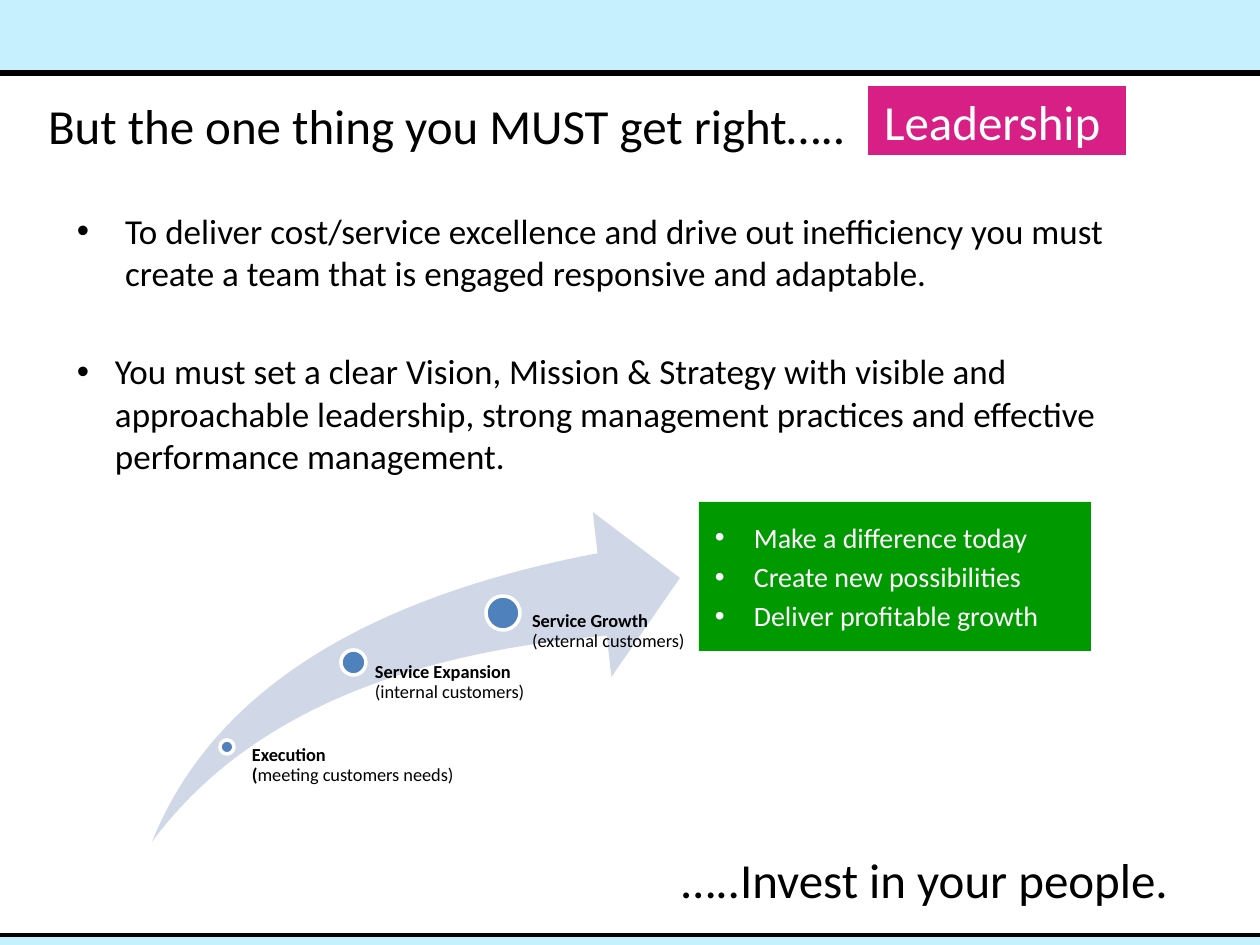
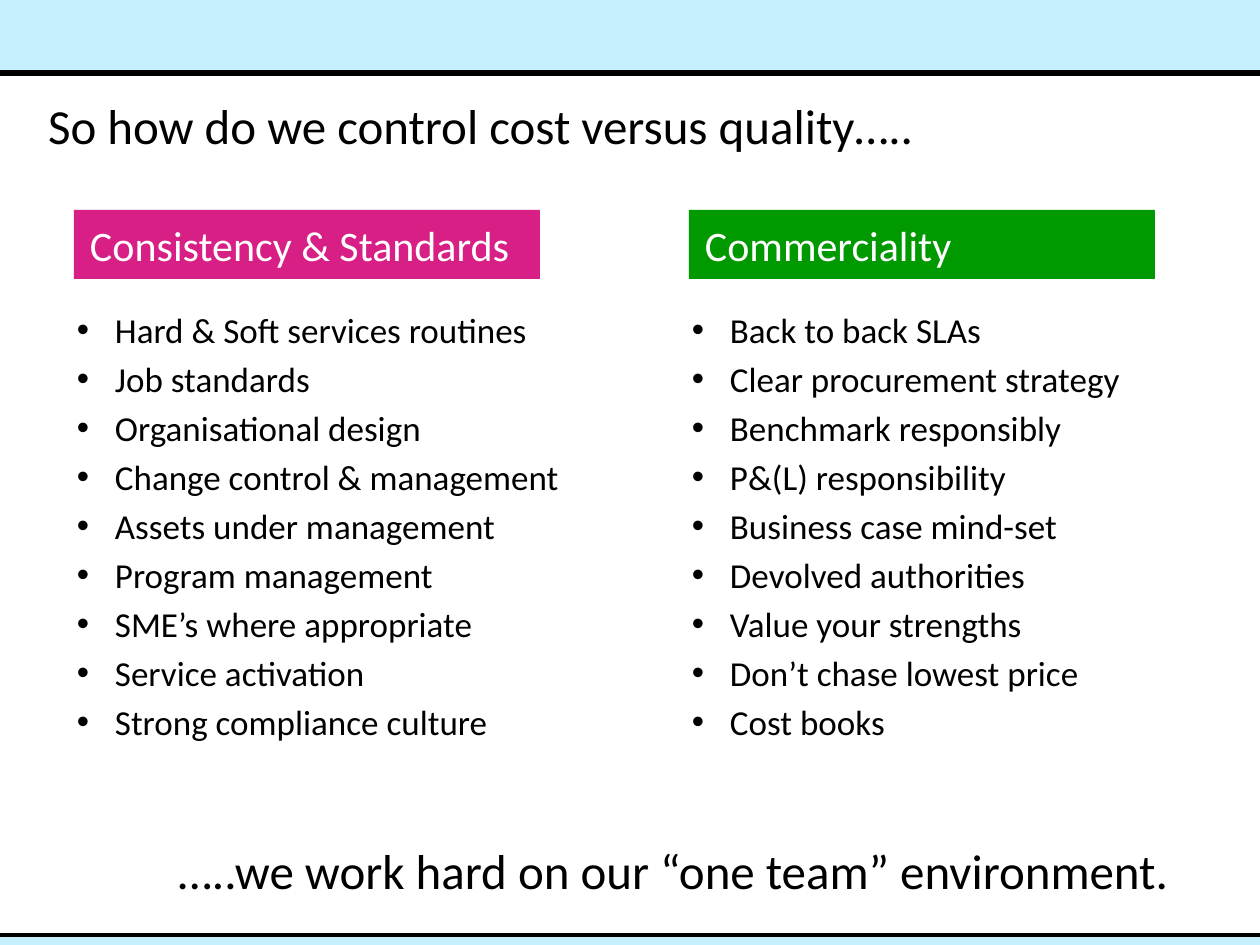
import copy

from lxml import etree
from pptx import Presentation
from pptx import util as u
from pptx.dml.color import RGBColor
from pptx.enum import shapes, text
from pptx.oxml.ns import qn

PX = u.Inches(1) / 126
WIDTH, HEIGHT = 1260, 945
FONT = "Calibri"
BREAK = ("\n", False)
COLOURS = {
    "band": "C7F0FF", "ink": "000000", "paper": "FFFFFF", "pink": "D71F85",
    "green": "009900", "swoosh": "D0D8E8", "dot": "4F81BD",
}


def px(*lengths):
    return [round(length * PX) for length in lengths]


def rgb(name):
    return RGBColor.from_string(COLOURS[name])


def add_bullet(paragraph, indent):
    props = paragraph._p.get_or_add_pPr()
    left, = px(indent)
    props.set("marL", str(left))
    props.set("indent", str(-left))
    etree.SubElement(props, qn("a:buFont")).set("typeface", "Arial")
    etree.SubElement(props, qn("a:buChar")).set("char", "•")


def write(frame, paragraphs, size=20, colour="ink", align="LEFT", anchor="TOP",
          insets=(13, 6, 13, 6), before=0, gap=None, line=None, bullets=()):
    """Fill a frame; a paragraph is a string or a list of (text, bold) pairs.

    before and gap are the points above the first and the later paragraphs,
    bullets the hanging indent of each paragraph.
    """
    frame.word_wrap = True
    frame.auto_size = text.MSO_AUTO_SIZE.NONE
    frame.vertical_anchor = text.MSO_ANCHOR[anchor]
    (frame.margin_left, frame.margin_top,
     frame.margin_right, frame.margin_bottom) = px(*insets)
    for i, content in enumerate(paragraphs):
        p = frame.paragraphs[0] if i == 0 else frame.add_paragraph()
        p.alignment = text.PP_ALIGN[align]
        p.space_before = u.Pt(before if i == 0 or gap is None else gap)
        if line:
            p.line_spacing = line
        if bullets:
            add_bullet(p, bullets[i])
        pairs = [(content, False)] if isinstance(content, str) else content
        for words, bold in pairs:
            if words == "\n":
                p.add_line_break()
                p._p[-1].append(copy.deepcopy(run._r.rPr))
                continue
            run = p.add_run()
            run.text = words
            run.font.name, run.font.size, run.font.bold = FONT, u.Pt(size), bold
            run.font.color.rgb = rgb(colour)


class Deck:
    def __init__(self):
        self.prs = Presentation()
        self.prs.slide_width, self.prs.slide_height = px(WIDTH, HEIGHT)
        self.slide = None

    def new_slide(self, title, closing, closing_top):
        self.slide = self.prs.slides.add_slide(self.prs.slide_layouts[5])
        fill = self.slide.background.fill
        fill.solid()
        fill.fore_color.rgb = rgb("paper")
        # Bands at the top and bottom edges
        for top, height, edge, weight in ((0, 73, 73, 3), (935, 10, 935, 2)):
            self.shape("RECTANGLE", 0, top, WIDTH, height, "band")
            self.rule(edge, weight)
        # Title and closing line
        heading = self.slide.shapes.title
        heading.left, heading.top, heading.width, heading.height = px(35, 84, 1162, 81)
        write(heading.text_frame, [title], size=28, anchor="MIDDLE")
        self.text(19, closing_top, 1162, 81, [closing], size=28,
                  align="RIGHT", anchor="MIDDLE")

    def shape(self, kind, left, top, width, height, fill, outline=None):
        item = self.slide.shapes.add_shape(
            shapes.MSO_SHAPE[kind], *px(left, top, width, height))
        item.shadow.inherit = False
        item.fill.solid()
        item.fill.fore_color.rgb = rgb(fill)
        if outline:
            item.line.color.rgb = rgb(outline)
            item.line.width = u.Pt(2)
        else:
            item.line.fill.background()
        return item

    def rule(self, y, weight):
        item = self.slide.shapes.add_connector(
            shapes.MSO_CONNECTOR.STRAIGHT, *px(0, y, WIDTH, y))
        item.line.color.rgb = rgb("ink")
        item.line.width = u.Pt(weight)
        etree.SubElement(item._element.spPr, qn("a:effectLst"))

    def text(self, left, top, width, height, paragraphs, **style):
        box = self.slide.shapes.add_textbox(*px(left, top, width, height))
        write(box.text_frame, paragraphs, **style)

    def panel(self, left, top, width, height, fill, paragraphs, size, **style):
        item = self.shape("RECTANGLE", left, top, width, height, fill)
        write(item.text_frame, paragraphs, size=size, colour="paper", anchor="MIDDLE",
              insets=(16, 9, 16, 9), before=size * 0.2, **style)


def leadership_slide(deck):
    deck.new_slide("But the one thing you MUST get right…..",
                   "…..Invest in your people.", 838)
    deck.panel(868, 86, 258, 69, "pink", ["Leadership"], 28)
    deck.text(64, 204, 1116, 290, [
        "To deliver cost/service excellence and drive out inefficiency you must "
        "create a team that is engaged responsive and adaptable.",
        "You must set a clear Vision, Mission & Strategy with visible and "
        "approachable leadership, strong management practices and effective "
        "performance management.",
    ], before=4, gap=32, bullets=(48, 38))

    # Growth path: dot left, top, size; label left, top, width, inset
    swoosh = deck.shape("SWOOSH_ARROW", 152, 512, 528, 330, "swoosh")
    swoosh.adjustments[0] = swoosh.adjustments[1] = 0.25
    stages = [
        ((220, 740, 14), (244, 746, 227, 8),
         [("Execution", True), BREAK, ("(", True), ("meeting customers needs)", False)]),
        ((341, 650, 25), (362, 663, 169, 13),
         [("Service Expansion", True), BREAK, ("(internal customers)", False)]),
        ((486, 596, 34), (514, 612, 185, 18),
         [("Service Growth", True), BREAK, ("(external customers)", False)]),
    ]
    for (x, y, size), (left, top, width, inset), label in stages:
        deck.shape("OVAL", x, y, size, size, "dot", outline="paper")
        deck.text(left, top, width, 842 - top, [label], size=10.5,
                  insets=(inset, 0, 0, 0), line=0.9)

    deck.panel(699, 502, 392, 149, "green", [
        "Make a difference today", "Create new possibilities",
        "Deliver profitable growth"], 16, bullets=(39,) * 3)


def control_slide(deck):
    deck.new_slide("So how do we control cost versus quality…..",
                   "…..we work hard on our “one team” environment.", 829)
    columns = [
        ("Consistency & Standards", "pink", [
            "Hard & Soft services routines", "Job standards",
            "Organisational design", "Change control & management",
            "Assets under management", "Program management",
            "SME’s where appropriate", "Service activation",
            "Strong compliance culture"]),
        ("Commerciality", "green", [
            "Back to back SLAs", "Clear procurement strategy",
            "Benchmark responsibly", "P&(L) responsibility",
            "Business case mind-set", "Devolved authorities",
            "Value your strengths", "Don’t chase lowest price", "Cost books"]),
    ]
    for i, (heading, colour, points) in enumerate(columns):
        left = 64 + 615 * i
        deck.panel(left + 10, 210, 466, 69, colour, [heading], 24)
        deck.text(left, 302, 557, 526, points, before=4, bullets=(38,) * len(points))


def main():
    deck = Deck()
    leadership_slide(deck)
    control_slide(deck)
    deck.prs.save("out.pptx")


if __name__ == "__main__":
    main()
